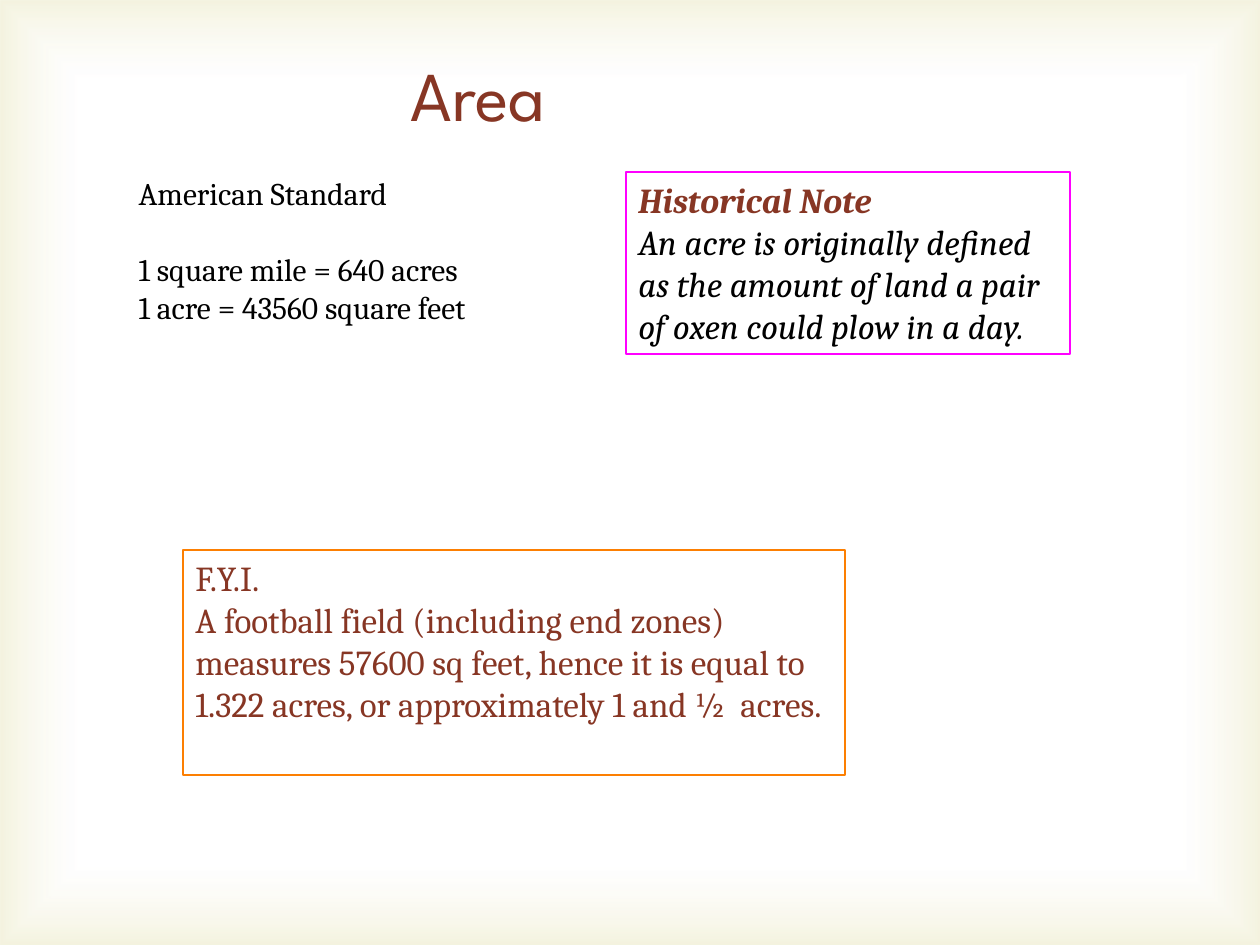
from dataclasses import dataclass

from pptx import Presentation, util as u
from pptx.dml.color import RGBColor
from pptx.enum import shapes, text
from pptx.oxml import parse_xml
from pptx.oxml.ns import nsdecls

EMU = 914400 / 126  # one px

BROWN = RGBColor(0x87, 0x36, 0x24)
BLACK = RGBColor(0, 0, 0)
PINK = RGBColor(0xFF, 0, 0xFF)
ORANGE = RGBColor(0xFC, 0x7F, 0x02)
WHITE = RGBColor(0xFF, 0xFF, 0xFF)
SAND = RGBColor(0xD1, 0xCA, 0x75)
HEAD = "League Spartan"
BODY = "Cambria"


@dataclass
class Box:
    left: int
    top: int
    width: int
    height: int

    def emu(self) -> list[int]:
        return [px(n) for n in (self.left, self.top, self.width, self.height)]


@dataclass
class Line:
    words: str
    size: int = 20
    color: RGBColor = BROWN
    font: str = BODY
    bold: bool = False
    italic: bool = False
    gap: float = 0  # points above


@dataclass
class Note:
    box: Box
    edge: RGBColor
    lines: list[Line]


def px(n: int) -> int:
    return round(n * EMU)


def write(shape, lines: list[Line]) -> None:
    frame = shape.text_frame
    frame.word_wrap = True
    frame.auto_size = text.MSO_AUTO_SIZE.NONE
    frame.vertical_anchor = text.MSO_ANCHOR.TOP
    for i, line in enumerate(lines):
        para = frame.add_paragraph() if i else frame.paragraphs[0]
        para.alignment = text.PP_ALIGN.LEFT
        para.space_before = u.Pt(line.gap)
        run = para.add_run()
        run.text = line.words
        font = run.font
        font.name, font.size = line.font, u.Pt(line.size)
        font.bold, font.italic = line.bold, line.italic
        font.color.rgb = line.color


def place(shape, box: Box, lines: list[Line]) -> None:
    shape.left, shape.top, shape.width, shape.height = box.emu()
    write(shape, lines)


def add_rect(slide, box: Box):
    rect = slide.shapes.add_shape(shapes.MSO_SHAPE.RECTANGLE, *box.emu())
    rect.shadow.inherit = False
    return rect


def add_glow(slide, box: Box) -> None:
    rect = add_rect(slide, box)
    rect.line.fill.background()
    stops = "".join(
        f'<a:gs pos="{pos}000"><a:srgbClr val="{color}">'
        f'<a:alpha val="{alpha}000"/></a:srgbClr></a:gs>'
        for pos, color, alpha in ((83, WHITE, 11), (100, SAND, 23))
    )
    grad = parse_xml(
        f'<a:gradFill {nsdecls("a")} rotWithShape="1"><a:gsLst>{stops}</a:gsLst>'
        '<a:path path="rect"><a:fillToRect l="50000" t="50000" r="50000" b="50000"/>'
        "</a:path></a:gradFill>"
    )
    rect.element.spPr.insert(2, grad)  # after position and geometry
    slide.shapes.element.insert(2, rect.element)  # behind everything


def add_note(slide, note: Note) -> None:
    rect = add_rect(slide, note.box)
    rect.fill.background()
    rect.line.color.rgb = note.edge
    rect.line.width = u.Pt(0.75)
    write(rect, note.lines)


TITLE = [Line("Area", 40, font=HEAD)]
UNITS = [
    Line("American Standard", 18, BLACK),
    Line("1 square mile = 640 acres", 18, BLACK, gap=21.7),
    Line("1 acre = 43560 square feet", 18, BLACK),
]
NOTES = [
    Note(Box(183, 550, 662, 225), ORANGE, [
        Line("F.Y.I."),
        Line("A football field (including end zones) measures 57600 sq feet, "
             "hence it is equal to 1.322 acres, or approximately 1 and ½  acres."),
    ]),
    Note(Box(626, 172, 444, 182), PINK, [
        Line("Historical Note", bold=True, italic=True),
        Line("An acre is originally defined as the amount of land a pair "
             "of oxen could plow in a day.", color=BLACK, italic=True),
    ]),
]


def main() -> None:
    prs = Presentation()
    prs.slide_width, prs.slide_height = px(1260), px(945)
    slide = prs.slides.add_slide(prs.slide_layouts[1])

    # Soft frame
    add_glow(slide, Box(0, 0, 1260, 945))

    # Title and unit list
    place(slide.shapes.title, Box(398, 45, 189, 97), TITLE)
    body = slide.placeholders[1]
    place(body, Box(126, 168, 470, 214), UNITS)
    for para in body.text_frame.paragraphs:
        props = para._p.get_or_add_pPr()
        props.set("marL", "0")
        props.set("indent", "0")
        props.append(parse_xml(f'<a:buNone {nsdecls("a")}/>'))

    # Framed notes
    for note in NOTES:
        add_note(slide, note)

    prs.save("out.pptx")


if __name__ == "__main__":
    main()
